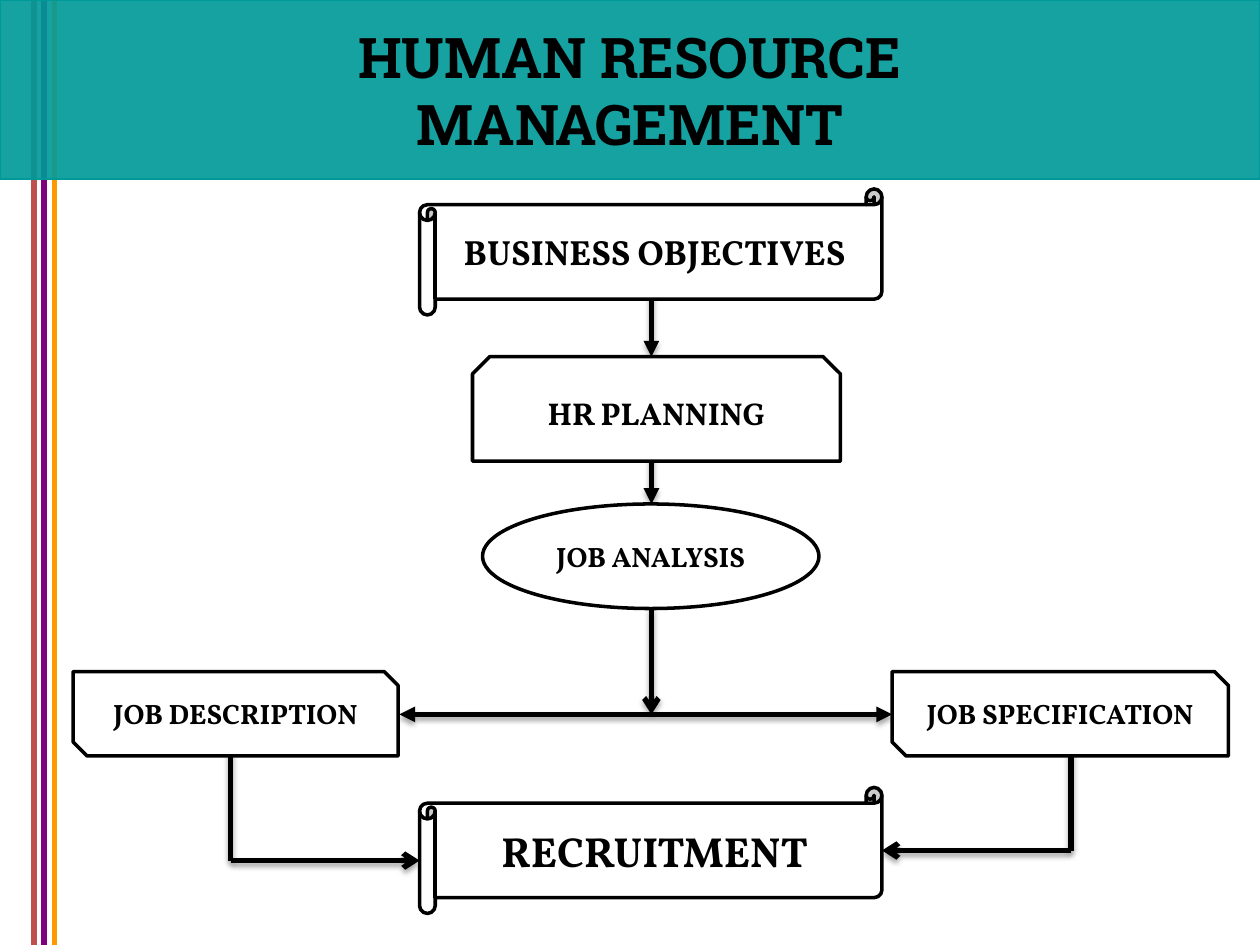
from dataclasses import dataclass

from lxml.etree import SubElement as Sub
from pptx import Presentation
from pptx.dml.color import RGBColor as RGB
from pptx.enum.shapes import MSO_CONNECTOR as Link, MSO_SHAPE as Form
from pptx.enum.text import MSO_ANCHOR as Anchor, MSO_AUTO_SIZE as Fit, PP_ALIGN as Align
from pptx.oxml.ns import qn
from pptx.util import Inches, Pt


@dataclass(frozen=True)
class Theme:
    ink: str = "000000"
    paper: str = "FFFFFF"
    band: str = "009999"
    red: str = "C0504D"
    purple: str = "800080"
    orange: str = "FF9900"
    head: str = "Roboto Slab"
    body: str = "Vollkorn"
    title: int = 32
    big: int = 24
    large: int = 20
    mid: int = 18
    small: int = 16
    rule: float = 3
    edge: float = 2
    thin: float = 0.75


class Chart:
    """Holds the theme and the current slide, and draws each kind of element."""

    def __init__(self, theme, slide):
        self.theme = theme
        self.slide = slide
        self.shapes = slide.shapes

    def text(self, shape, lines, font, size):
        frame = shape.text_frame
        frame.auto_size = Fit.NONE
        frame.word_wrap = True
        frame.vertical_anchor = Anchor.MIDDLE
        for i, line in enumerate(lines):
            para = frame.add_paragraph() if i else frame.paragraphs[0]
            para.alignment = Align.CENTER
            run = para.add_run()
            run.text = line
            run.font.name = font
            run.font.size = Pt(size)
            run.font.bold = True
            run.font.color.rgb = RGB.from_string(self.theme.ink)

    def paint(self, shape, fill, line, width):
        shape.fill.solid()
        shape.fill.fore_color.rgb = RGB.from_string(fill)
        shape.line.color.rgb = RGB.from_string(line)
        shape.line.width = Pt(width)

    def title(self, lines, high, alpha):
        """Turn the title placeholder into a see-through band above the stripes."""
        look = self.theme
        band = self.shapes.title
        band.left, band.top = Inches(0), Inches(0)
        band.width, band.height = Inches(10), Inches(high)
        self.paint(band, look.band, look.band, look.thin)
        tint = band.fill._xPr.find(".//" + qn("a:srgbClr"))
        Sub(tint, qn("a:alpha"), val=str(alpha * 1000))
        self.text(band, lines, look.head, look.title)
        self.shapes._spTree.append(band._element)

    def line(self, start, end, color=None, head=None, tail=None, shade=True):
        """Draw a straight line; head and tail are the arrowheads at start and end."""
        look = self.theme
        link = self.shapes.add_connector(
            Link.STRAIGHT, *(Inches(v) for v in (*start, *end)))
        link.line.color.rgb = RGB.from_string(color or look.ink)
        link.line.width = Pt(look.rule)
        pen = link.line._get_or_add_ln()
        for tag, kind in (("a:headEnd", head), ("a:tailEnd", tail)):
            if kind:
                Sub(pen, qn(tag), type=kind)
        effect = Sub(link._element.spPr, qn("a:effectLst"))
        if shade:
            glow = Sub(effect, qn("a:outerShdw"), blurRad=str(Pt(3.1)),
                       dist=str(Pt(1.8)), dir="5400000", rotWithShape="0")
            tint = Sub(glow, qn("a:srgbClr"), val=look.ink)
            Sub(tint, qn("a:alpha"), val="35000")

    def box(self, form, label, size, place):
        look = self.theme
        shape = self.shapes.add_shape(form, *(Inches(v) for v in place))
        shape.shadow.inherit = False
        self.paint(shape, look.paper, look.ink, look.edge)
        self.text(shape, [label], look.body, size)


def main():
    deck = Presentation()
    deck.slide_width, deck.slide_height = Inches(10), Inches(7.5)
    look = Theme()
    chart = Chart(look, deck.slides.add_slide(deck.slide_layouts[5]))

    for i, color in enumerate((look.red, look.purple, look.orange)):
        x = 0.27 + 0.08 * i
        chart.line((x, 0), (x, 7.5), color, shade=False)
    chart.title(["HUMAN RESOURCE", "MANAGEMENT"], 1.42, 91)

    mid, left, right = 5.17, 1.83, 8.5
    for top, end, tip in ((2.33, 2.83, "triangle"), (3.58, 4, "triangle"),
                          (4.83, 5.67, "arrow")):
        chart.line((mid, top), (mid, end), tail=tip)
    chart.line((3.17, 5.67), (7.08, 5.67), head="triangle", tail="triangle")
    for x, low, end in ((left, 6.83, 3.33), (right, 6.75, 7)):
        chart.line((x, 5.92), (x, low))
        chart.line((x, low), (end, low), tail="arrow")

    scroll, snip = Form.HORIZONTAL_SCROLL, Form.SNIP_2_DIAG_RECTANGLE
    for item in (
        (scroll, "BUSINESS OBJECTIVES", look.large, (3.33, 1.5, 3.67, 1)),
        (Form.SNIP_2_SAME_RECTANGLE, "HR PLANNING", look.mid, (3.75, 2.83, 2.92, 0.83)),
        (Form.OVAL, "JOB ANALYSIS", look.small, (3.83, 4, 2.67, 0.83)),
        (snip, "JOB DESCRIPTION", look.small, (0.58, 5.33, 2.58, 0.67)),
        (snip, "JOB SPECIFICATION", look.small, (7.08, 5.33, 2.67, 0.67)),
        (scroll, "RECRUITMENT", look.big, (3.33, 6.25, 3.67, 1)),
    ):
        chart.box(*item)

    deck.save("out.pptx")


if __name__ == "__main__":
    main()
